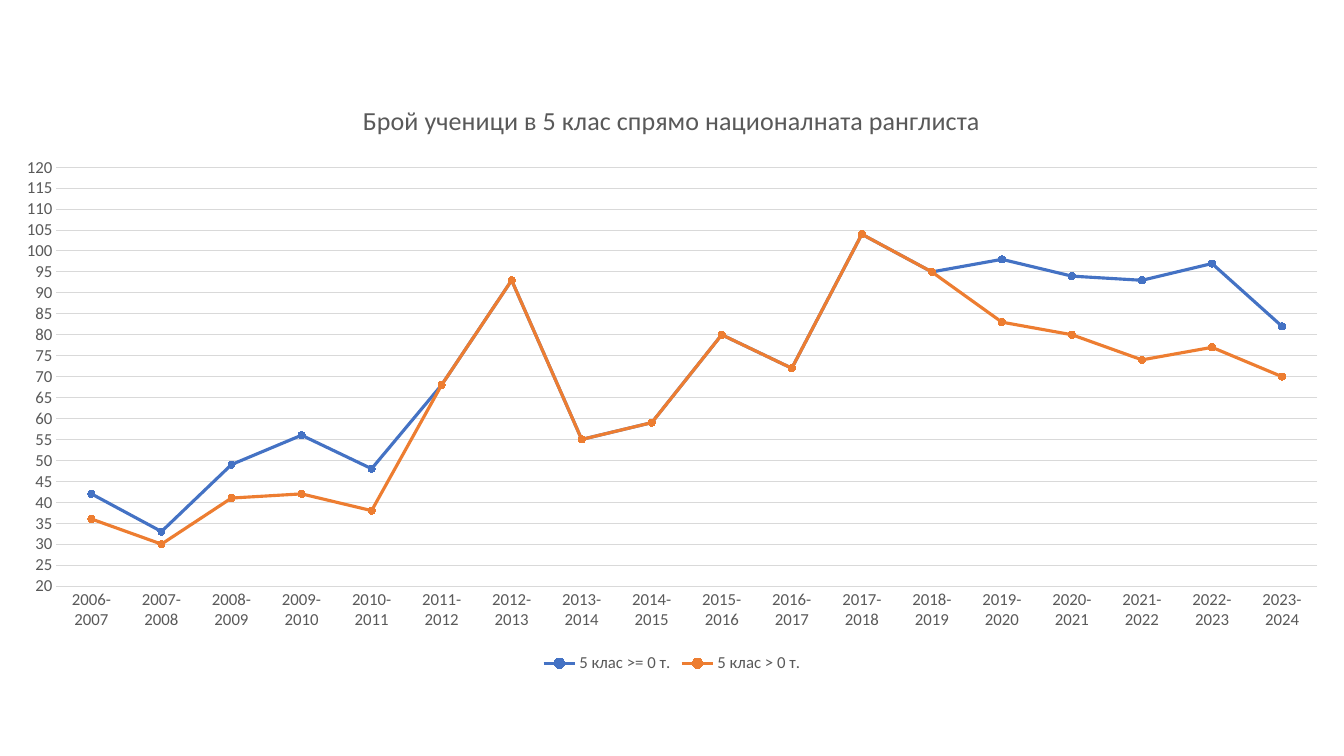
from pptx import Presentation
from pptx import util as u
from pptx.chart.data import CategoryChartData
from pptx.dml.color import RGBColor
from pptx.enum import chart as ch

PX = 9525  # 96 px to the inch
FONT = "Calibri"
GREY = RGBColor(0x59, 0x59, 0x59)
LIGHT = RGBColor(0xD9, 0xD9, 0xD9)
BLUE = RGBColor(0x44, 0x72, 0xC4)
ORANGE = RGBColor(0xED, 0x7D, 0x31)

TITLE = "Брой ученици в 5 клас спрямо националната ранглиста"
YEARS = [f"{year}-{year + 1}" for year in range(2006, 2024)]
SERIES = [
    ("5 клас >= 0 т.", BLUE,
     [42, 33, 49, 56, 48, 68, 93, 55, 59, 80, 72, 104, 95, 98, 94, 93, 97, 82]),
    ("5 клас > 0 т.", ORANGE,
     [36, 30, 41, 42, 38, 68, 93, 55, 59, 80, 72, 104, 95, 83, 80, 74, 77, 70]),
]


def style_font(font, size):
    font.name = FONT
    font.size = u.Pt(size)
    font.bold = False
    font.color.rgb = GREY


def style_line(line, color, width):
    line.color.rgb = color
    line.width = u.Pt(width)


def style_title(chart):
    chart.has_title = True
    para = chart.chart_title.text_frame.paragraphs[0]
    span = para.add_run()
    span.text = TITLE
    style_font(span.font, 18.6)
    chart.chart_title.include_in_layout = False


def style_axes(chart):
    for axis in (chart.category_axis, chart.value_axis):
        axis.major_tick_mark = axis.minor_tick_mark = ch.XL_TICK_MARK.NONE
        style_font(axis.tick_labels.font, 12)
    style_line(chart.category_axis.format.line, LIGHT, 0.75)

    values = chart.value_axis
    values.minimum_scale, values.maximum_scale, values.major_unit = 20, 120, 5
    values.format.line.fill.background()
    values.has_major_gridlines = True
    style_line(values.major_gridlines.format.line, LIGHT, 0.75)


def style_series(series, color):
    series.smooth = False
    style_line(series.format.line, color, 2.25)
    marker = series.marker
    marker.style = ch.XL_MARKER_STYLE.CIRCLE
    marker.size = 5
    marker.format.fill.solid()
    marker.format.fill.fore_color.rgb = color
    style_line(marker.format.line, color, 0.75)


def add_pupils_chart(page, left, top, width, height):
    data = CategoryChartData(number_format="General")
    data.categories = YEARS
    for name, _, counts in SERIES:
        data.add_series(name, counts)
    box = [side * PX for side in (left, top, width, height)]
    chart = page.shapes.add_chart(ch.XL_CHART_TYPE.LINE_MARKERS, *box, data).chart
    chart.font.name = FONT
    chart.font.size = u.Pt(10)

    style_title(chart)
    style_axes(chart)
    chart.plots[0].vary_by_categories = False
    for series, (_, color, _) in zip(chart.plots[0].series, SERIES):
        style_series(series, color)

    # Legend
    chart.has_legend = True
    chart.legend.position = ch.XL_LEGEND_POSITION.BOTTOM
    chart.legend.include_in_layout = False
    style_font(chart.legend.font, 12)


def main():
    deck = Presentation()
    deck.slide_width, deck.slide_height = 1280 * PX, 720 * PX
    page = deck.slides.add_slide(deck.slide_layouts[6])
    add_pupils_chart(page, 0, 76, 1280, 569)
    deck.save("out.pptx")


if __name__ == "__main__":
    main()
